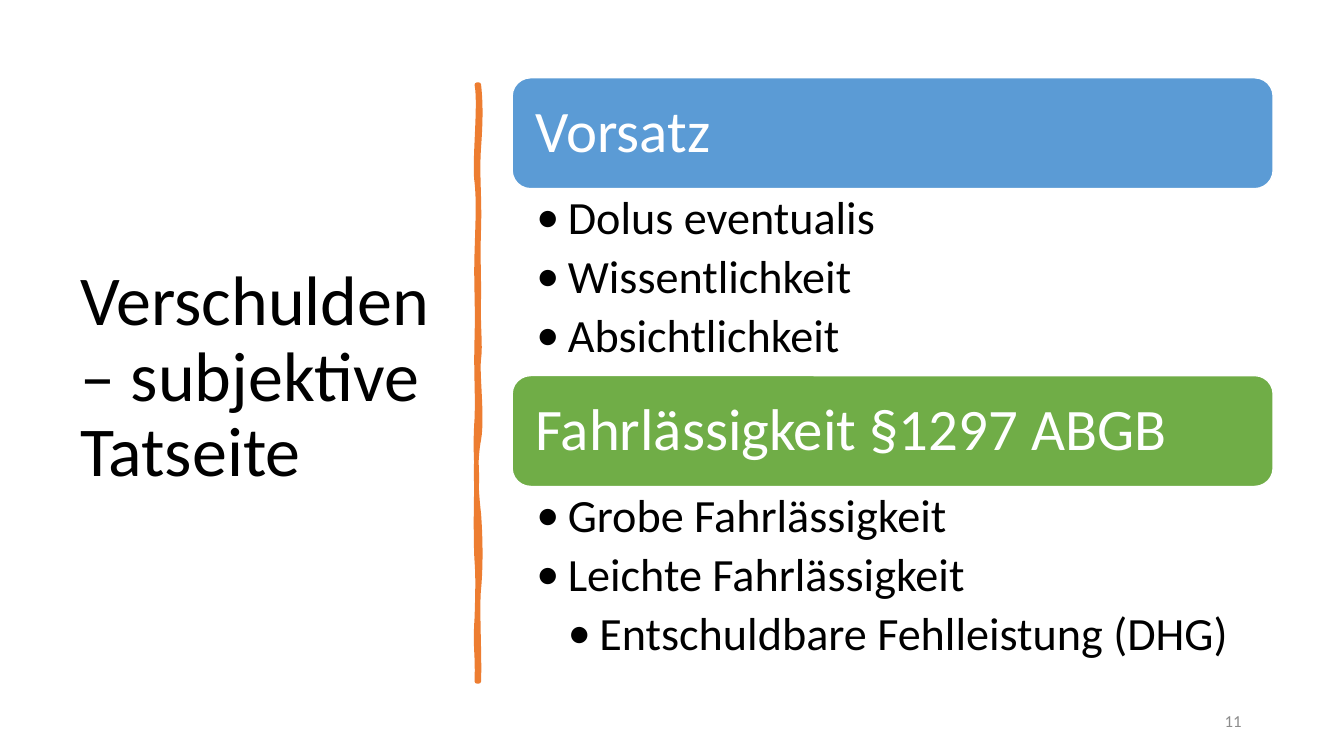
from lxml import etree
from pptx import Presentation
from pptx.dml.color import RGBColor
from pptx.enum.shapes import MSO_SHAPE
from pptx.enum.text import MSO_ANCHOR, MSO_AUTO_SIZE, PP_ALIGN
from pptx.oxml.ns import qn
from pptx.util import Pt

ROUNDED = MSO_SHAPE.ROUNDED_RECTANGLE
MIDDLE, TOP = MSO_ANCHOR.MIDDLE, MSO_ANCHOR.TOP
LEFT, RIGHT = PP_ALIGN.LEFT, PP_ALIGN.RIGHT
NO_FIT = MSO_AUTO_SIZE.NONE


def color(hex_string):
    return RGBColor.from_string(hex_string)


def write(paragraph, text, size, hex_string, align=LEFT, spacing=0.9):
    paragraph.alignment = align
    paragraph.line_spacing = spacing
    run = paragraph.add_run()
    run.text = text
    run.font.name = "Calibri"
    run.font.size = Pt(size)
    run.font.color.rgb = color(hex_string)


deck = Presentation()
deck.slide_width, deck.slide_height = Pt(960), Pt(540)
slide = deck.slides.add_slide(deck.slide_layouts[5])
shapes = slide.shapes

# Title on the left
title = shapes.title
title.left, title.top, title.width, title.height = Pt(50), Pt(50.4), Pt(269.3), Pt(440)
title.text_frame.vertical_anchor = MIDDLE
title.text_frame.auto_size = NO_FIT
title.text_frame.word_wrap = True
write(title.text_frame.paragraphs[0], "Verschulden – subjektive Tatseite", 50, "000000")

# Hand-drawn divider: Bézier curves (two control points, end point) down and back up
divider_start = (342, 60.5)
divider_curves = [
    [(343.4, 73.4), (343.4, 85.7), (342, 105.1)], [(340.6, 124.6), (342.7, 140.4), (342, 162.7)],
    [(341.3, 185), (342, 188.6), (342, 211.7)], [(341.3, 234), (343.4, 246.2), (342, 256.3)],
    [(340.6, 266.4), (344.9, 298.1), (342, 313.9)], [(339.1, 329), (339.8, 348.5), (342, 367.2)],
    [(343.4, 385.9), (343.4, 406.1), (342, 420.5)], [(340.6, 434.2), (342.7, 468), (342, 486.7)],
    [(341.3, 486.7), (340.6, 486.7), (340.6, 486.7)],
    [(341.3, 465.1), (339.1, 463.7), (340.6, 441.4)],
    [(341.3, 419.8), (341.3, 410.4), (340.6, 401)],
    [(339.8, 391.7), (339.8, 356.4), (340.6, 343.4)],
    [(340.6, 330.5), (339.1, 320.4), (340.6, 298.8)],
    [(341.3, 277.9), (339.8, 268.6), (340.6, 241.2)],
    [(341.3, 214.6), (339.8, 202.3), (340.6, 180)], [(341.3, 157), (342, 144), (340.6, 130.3)],
    [(338.4, 117.4), (343.4, 74.9), (340.6, 60.5)],
]
outline = shapes.build_freeform(Pt(divider_start[0]), Pt(divider_start[1]))
outline.add_line_segments([(Pt(x), Pt(y)) for _, _, (x, y) in divider_curves], close=True)
divider = outline.convert_to_shape()
# Bend each straight segment into its curve
segments = list(divider._element.iter(qn("a:lnTo")))
for segment, curve in zip(segments, divider_curves):
    bend = etree.Element(qn("a:cubicBezTo"))
    for x, y in curve:
        point = etree.SubElement(bend, qn("a:pt"))
        point.set("x", str(Pt(x) - divider.left))
        point.set("y", str(Pt(y) - divider.top))
    segment.getparent().replace(segment, bend)
divider.shadow.inherit = False
divider.fill.solid()
divider.fill.fore_color.rgb = color("ED7D31")
divider.line.color.rgb = color("ED7D31")
divider.line.width = Pt(3.25)

# Forms of fault: heading bar with its bullets below
faults = [
    ("Vorsatz", "5B9BD5",
     [("Dolus eventualis", 1), ("Wissentlichkeit", 1), ("Absichtlichkeit", 1)]),
    ("Fahrlässigkeit §1297 ABGB", "70AD47",
     [("Grobe Fahrlässigkeit", 1), ("Leichte Fahrlässigkeit", 1),
      ("Entschuldbare Fehlleistung (DHG)", 2)]),
]
FAULT_LEFT, FAULT_TOP, FAULT_WIDTH = 365.8, 55.6, 543.6
BAR_HEIGHT, LIST_HEIGHT, INDENT = 79.2, 133.5, 22.5

for index, (heading, fill, kinds) in enumerate(faults):
    top = FAULT_TOP + index * (BAR_HEIGHT + LIST_HEIGHT)
    bar = shapes.add_shape(ROUNDED, Pt(FAULT_LEFT), Pt(top), Pt(FAULT_WIDTH), Pt(BAR_HEIGHT))
    bar.shadow.inherit = False
    bar.fill.solid()
    bar.fill.fore_color.rgb = color(fill)
    bar.line.color.rgb = color("FFFFFF")
    bar.line.width = Pt(1)
    label = bar.text_frame
    label.word_wrap = True
    label.vertical_anchor = MIDDLE
    # The bar's rounded corners already inset its text by a few points
    label.margin_left = label.margin_right = Pt(12.8)
    write(label.paragraphs[0], heading, 42, "FFFFFF")

    kind_list = shapes.add_textbox(Pt(FAULT_LEFT), Pt(top + BAR_HEIGHT),
                                   Pt(FAULT_WIDTH), Pt(LIST_HEIGHT)).text_frame
    kind_list.word_wrap = True
    kind_list.vertical_anchor = TOP
    kind_list.margin_left, kind_list.margin_right = Pt(17.25), Pt(23.5)
    kind_list.margin_top = kind_list.margin_bottom = Pt(4.2)
    for row, (kind, level) in enumerate(kinds):
        item = kind_list.add_paragraph() if row else kind_list.paragraphs[0]
        item.level = level
        item.space_after = Pt(6.6)
        write(item, kind, 33, "000000")
        properties = item._p.get_or_add_pPr()
        properties.set("marL", str(Pt(INDENT * level)))
        properties.set("indent", str(-Pt(INDENT)))
        etree.SubElement(properties, qn("a:buFont")).set("typeface", "Calibri")
        etree.SubElement(properties, qn("a:buChar")).set("char", "•")

# Page number
page_number = shapes.add_textbox(Pt(678), Pt(500.5), Pt(216), Pt(28.75)).text_frame
page_number.word_wrap = True
page_number.vertical_anchor = MIDDLE
write(page_number.paragraphs[0], "11", 12, "8C8C8C", RIGHT, 1.0)

deck.save("out.pptx")
